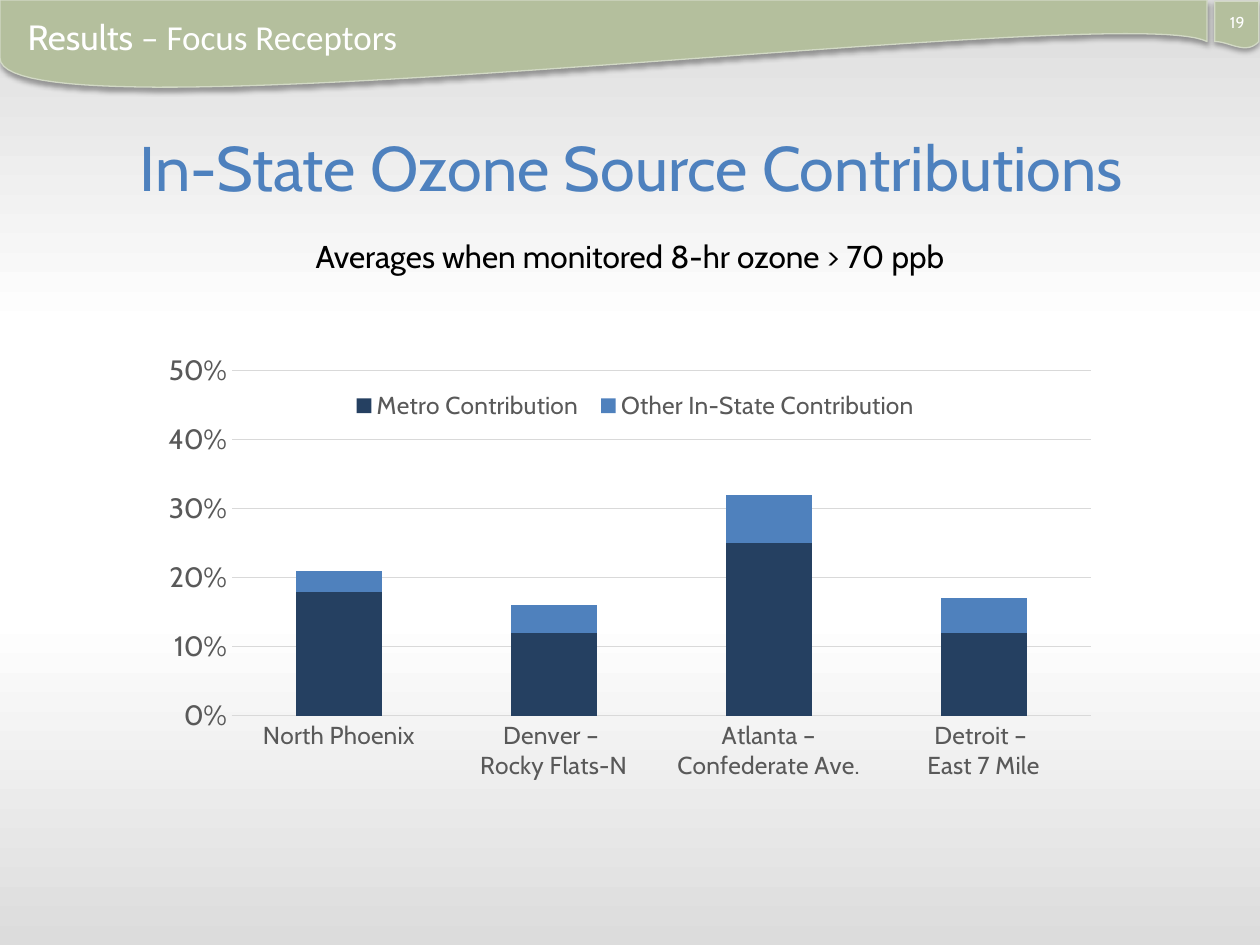
"""Build the in-state ozone source contributions slide."""
from copy import deepcopy
from dataclasses import dataclass

from lxml import etree
from pptx import Presentation
from pptx import util as u
from pptx.chart import data
from pptx.dml.color import RGBColor
from pptx.enum import chart as charts
from pptx.enum import text
from pptx.oxml import ns, parse_xml


@dataclass(frozen=True)
class Theme:
    font: str = "Cabin"
    alternate_font: str = "Calibri"
    edge: str = "DCDCDC"
    white: str = "FFFFFF"
    black: str = "000000"
    banner: str = "B4BF9D"
    banner_line: str = "D2D9C5"
    title: str = "4E81BE"
    label: str = "595959"
    grid: str = "D9D9D9"
    metro: str = "254061"
    other: str = "4F81BD"
    title_size: int = 36
    section_size: int = 20
    subtitle_size: int = 18
    value_size: int = 16
    label_size: int = 14
    chart_size: int = 10
    number_size: int = 9
    line_width: float = 0.75


theme = Theme()


def set_font(font, size, color, name=theme.font):
    font.size = u.Pt(size)
    font.name = name
    font.color.rgb = RGBColor.from_string(color)


def set_layout(parent, index, x, y, width, height, target=""):
    for old in parent.findall(ns.qn("c:layout")):
        parent.remove(old)
    inner = f'<c:layoutTarget val="{target}"/>' if target else ""
    parent.insert(index, parse_xml(
        f'<c:layout {ns.nsdecls("c")}><c:manualLayout>{inner}'
        '<c:xMode val="edge"/><c:yMode val="edge"/>'
        f'<c:x val="{x}"/><c:y val="{y}"/><c:w val="{width}"/><c:h val="{height}"/>'
        '</c:manualLayout></c:layout>'))


deck = Presentation()
deck.slide_width, deck.slide_height = u.Inches(10), u.Inches(7.5)
page = deck.slides.add_slide(deck.slide_layouts[5])

backdrop = page.background.fill
backdrop.gradient()
backdrop.gradient_angle = 270
stop_list = next(page.element.iter(ns.qn("a:gsLst")))
for _ in range(2):
    stop_list.append(deepcopy(stop_list[0]))
stops = [(0, theme.edge), (0.35, theme.white), (0.65, theme.white), (1, theme.edge)]
for stop, (position, color) in zip(backdrop.gradient_stops, stops):
    stop.position = position
    stop.color.rgb = RGBColor.from_string(color)

banners = [
    ((0, 0), (9.58, 0), [(9.58, 0.33), (8.94, -0.01), (0, 1.17), (0, 0.46)]),
    ((9.64, 0.01), (9.99, 0.01), [(9.99, 0.33), (9.89, 0.44), (9.76, 0.33), (9.64, 0.33)]),
]
steps = 60
for start, corner, controls in banners:
    points = [corner]
    for step in range(steps + 1):
        t = step / steps
        weights = [(1 - t) ** 3, 3 * t * (1 - t) ** 2, 3 * t ** 2 * (1 - t), t ** 3]
        points.append(tuple(sum(w * v for w, v in zip(weights, axis))
                            for axis in zip(*controls)))
    builder = page.shapes.build_freeform(u.Inches(start[0]), u.Inches(start[1]))
    builder.add_line_segments([(u.Inches(x), u.Inches(y)) for x, y in points], close=True)
    banner = builder.convert_to_shape()
    banner.fill.solid()
    banner.fill.fore_color.rgb = RGBColor.from_string(theme.banner)
    banner.line.color.rgb = RGBColor.from_string(theme.banner_line)
    banner.line.width = u.Pt(theme.line_width)
    banner.shadow.inherit = False
    effects = next(banner.element.iter(ns.qn("a:effectLst")))
    shadow = etree.SubElement(effects, ns.qn("a:outerShdw"), blurRad=str(u.Pt(3.1)),
                              dist=str(u.Pt(1.8)), dir="5400000", rotWithShape="0")
    shade = etree.SubElement(shadow, ns.qn("a:srgbClr"), val=theme.black)
    etree.SubElement(shade, ns.qn("a:alpha"), val="35000")

title = page.shapes.title
title.left, title.top = u.Inches(0.01), u.Inches(0.97)
title.width, title.height = u.Inches(10), u.Inches(0.7)
title.text_frame.text = "In-State Ozone Source Contributions"
title.text_frame.vertical_anchor = text.MSO_ANCHOR.MIDDLE
title.text_frame.paragraphs[0].alignment = text.PP_ALIGN.CENTER
set_font(title.text_frame.paragraphs[0].runs[0].font, theme.title_size, theme.title)

captions = [
    ((9.64, 0.05, 0.36, 0.33), "19", theme.number_size, theme.white, text.PP_ALIGN.CENTER),
    ((0, 1.83, 10, 0.4), "Averages when monitored 8-hr ozone > 70 ppb",
     theme.subtitle_size, theme.black, text.PP_ALIGN.CENTER),
    ((0.12, 0.07, 4.65, 0.44), "Results ", theme.section_size, theme.white, text.PP_ALIGN.LEFT),
]
for bounds, wording, size, color, alignment in captions:
    box = page.shapes.add_textbox(*map(u.Inches, bounds))
    box.text_frame.word_wrap = True
    box.text_frame.text = wording
    para = box.text_frame.paragraphs[0]
    para.alignment = alignment
    set_font(para.runs[0].font, size, color)
span = para.add_run()
span.text = "– Focus Receptors"
set_font(span.font, theme.section_size, theme.white, theme.alternate_font)

contributions = data.CategoryChartData(number_format="0%")
contributions.categories = ["North Phoenix", "Denver – \nRocky Flats-N",
                            "Atlanta – Confederate Ave.", "Detroit – \nEast 7 Mile"]
contributions.add_series("Metro Contribution", [0.18, 0.12, 0.25, 0.12])
contributions.add_series("Other In-State Contribution", [0.03, 0.04, 0.07, 0.05])
chart = page.shapes.add_chart(
    charts.XL_CHART_TYPE.COLUMN_STACKED, u.Inches(1.19), u.Inches(2.73),
    u.Inches(7.63), u.Inches(3.93), contributions).chart
chart.has_title = False
set_font(chart.font, theme.chart_size, theme.black)

plot = chart.plots[0]
plot.gap_width, plot.overlap, plot.vary_by_categories = 150, 100, False
for series, color in zip(plot.series, (theme.metro, theme.other)):
    series.format.fill.solid()
    series.format.fill.fore_color.rgb = RGBColor.from_string(color)

sites, shares = chart.category_axis, chart.value_axis
for axis, size in ((sites, theme.label_size), (shares, theme.value_size)):
    axis.major_tick_mark = axis.minor_tick_mark = charts.XL_TICK_MARK.NONE
    set_font(axis.tick_labels.font, size, theme.label)
shares.minimum_scale, shares.maximum_scale, shares.major_unit = 0, 0.5, 0.1
shares.tick_labels.number_format = "0%"
shares.tick_labels.number_format_is_linked = False
shares.format.line.fill.background()
for rule in (sites.format.line, shares.major_gridlines.format.line):
    rule.color.rgb = RGBColor.from_string(theme.grid)
    rule.width = u.Pt(theme.line_width)

chart.has_legend = True
legend = chart.legend
legend.position = charts.XL_LEGEND_POSITION.BOTTOM
legend.include_in_layout = False
set_font(legend.font, theme.label_size, theme.label)
root = plot.series[0].format.fill and sites.tick_labels and chart.element
set_layout(next(root.iter(ns.qn("c:plotArea"))), 0, 0.085, 0.054, 0.894, 0.697, "inner")
set_layout(next(root.iter(ns.qn("c:legend"))), 1, 0.2, 0.09, 0.61, 0.07)

deck.save("out.pptx")
